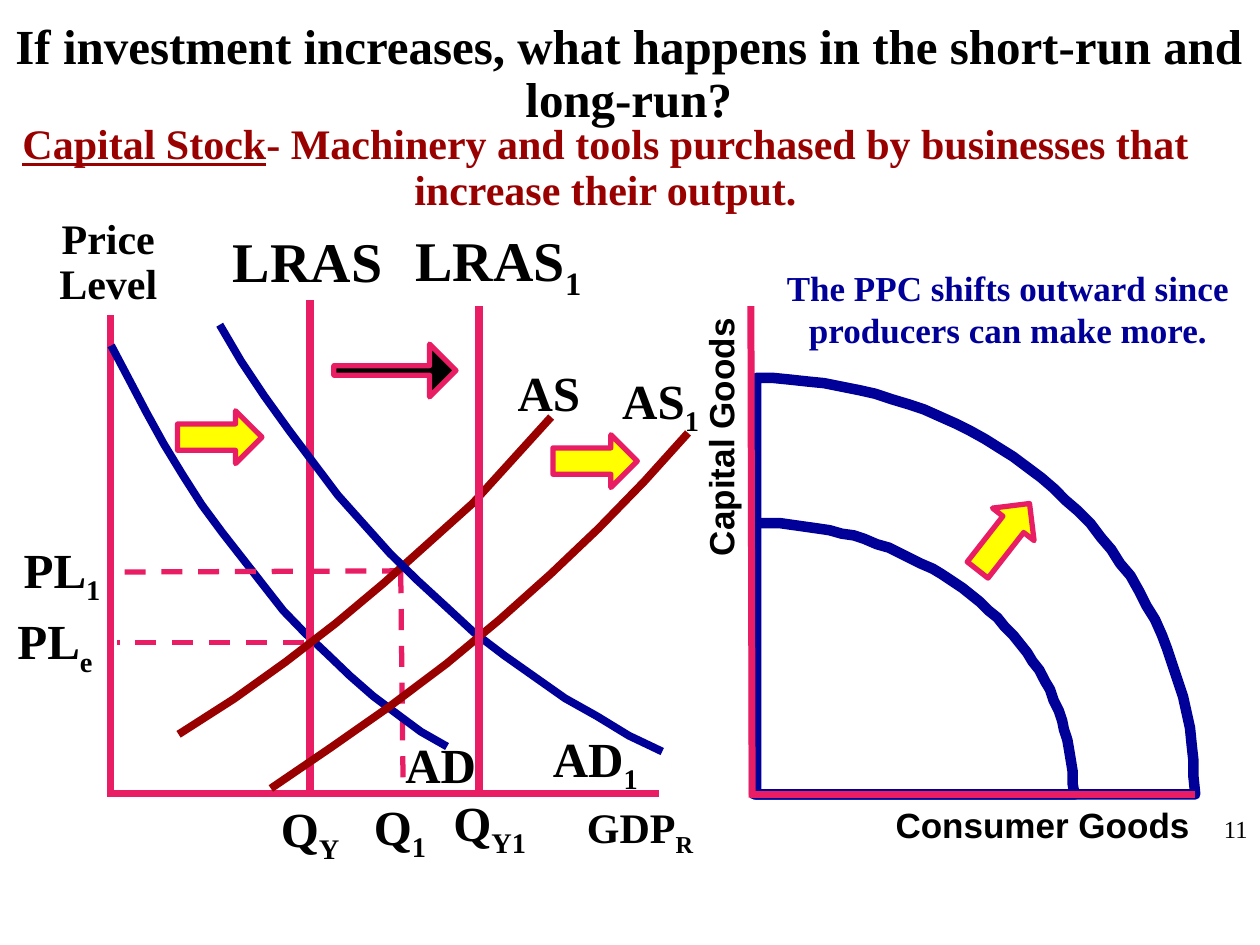
import math
from dataclasses import dataclass

import pptx
import pptx.util
from lxml import etree
from pptx.dml.color import RGBColor
from pptx.enum.dml import MSO_LINE
from pptx.enum.shapes import MSO_CONNECTOR, MSO_SHAPE
from pptx.enum.text import MSO_ANCHOR, MSO_AUTO_SIZE, PP_ALIGN
from pptx.oxml.ns import qn

Pt = pptx.util.Pt


@dataclass(frozen=True)
class Theme:
    serif: str = "Times New Roman"
    sans: str = "Arial"
    black: RGBColor = RGBColor(0x00, 0x00, 0x00)
    pink: RGBColor = RGBColor(0xE9, 0x1D, 0x63)
    blue: RGBColor = RGBColor(0x00, 0x00, 0x99)
    red: RGBColor = RGBColor(0x99, 0x00, 0x00)
    yellow: RGBColor = RGBColor(0xFF, 0xFF, 0x00)
    long_run: int = 32
    heading: int = 28
    definition: int = 24
    note: int = 20
    page: int = 14


THEME = Theme()
DEMAND_BEND = (0.36, 0.67)
SUPPLY_BEND = (0.59, 0.56)


def place(shape, box):
    shape.left, shape.top, shape.width, shape.height = map(Pt, box)


def format_paragraph(paragraph, size, color=THEME.black, name=THEME.serif,
                     align=PP_ALIGN.LEFT, spacing=1.0, bold=True):
    paragraph.alignment = align
    paragraph.line_spacing = spacing
    font = paragraph.font
    font.name, font.size, font.bold = name, Pt(size), bold
    font.color.rgb = color


def add_text(slide, box, lines, size, wrap=True, **style):
    shape = slide.shapes.add_textbox(*map(Pt, box))
    frame = shape.text_frame
    frame.word_wrap = wrap
    for index, line in enumerate(lines):
        paragraph = frame.paragraphs[0] if index == 0 else frame.add_paragraph()
        paragraph.add_run().text = line
        format_paragraph(paragraph, size, **style)
    return shape


def add_label(slide, box, text, size=THEME.heading):
    base, _, subscript = text.partition("_")
    shape = add_text(slide, box, [base], size, wrap=False)
    if subscript:
        run = shape.text_frame.paragraphs[0].add_run()
        run.text = subscript
        run.font._element.set("baseline", "-25000")


def add_line(slide, start, end, width, dashed=False):
    connector = slide.shapes.add_connector(
        MSO_CONNECTOR.STRAIGHT, *map(Pt, start + end))
    connector.line.color.rgb = THEME.pink
    connector.line.width = Pt(width)
    if dashed:
        connector.line.dash_style = MSO_LINE.DASH
    etree.SubElement(connector._element.spPr, qn("a:effectLst"))


def add_outline(slide, points, color, width, close=False):
    builder = slide.shapes.build_freeform(*points[0], scale=Pt(1))
    builder.add_line_segments(points[1:], close=close)
    shape = builder.convert_to_shape()
    shape.shadow.inherit = False
    shape.fill.background()
    shape.line.color.rgb = color
    shape.line.width = Pt(width)
    return shape


def add_curve(slide, box, bend, rising, color, tilt, steps=16):
    left, top, width, height = box
    first, last = (1, 0) if rising else (0, 1)
    points = []
    for step in range(steps + 1):
        t = step / steps
        x = 2 * t * (1 - t) * bend[0] + t * t
        y = (1 - t) ** 2 * first + 2 * t * (1 - t) * bend[1] + t * t * last
        points.append((left + width * x, top + height * y))
    add_outline(slide, points, color, 4.5).rotation = tilt


def add_frontier(slide, left, top, width, height, steps=40):
    angles = [math.pi / 2 * step / steps for step in range(steps + 1)]
    points = [(left + width * math.sin(angle), top + height * (1 - math.cos(angle)))
              for angle in angles]
    add_outline(slide, points + [(left, top + height)], THEME.blue, 6, close=True)


def add_arrow(slide, box, fill=THEME.yellow, shaft=0.5, rotation=0):
    arrow = slide.shapes.add_shape(MSO_SHAPE.RIGHT_ARROW, *map(Pt, box))
    arrow.adjustments[0] = shaft
    arrow.rotation = rotation
    arrow.shadow.inherit = False
    arrow.fill.solid()
    arrow.fill.fore_color.rgb = fill
    arrow.line.color.rgb = THEME.pink
    arrow.line.width = Pt(3)


def add_headings(slide):
    title = slide.shapes.title
    place(title, (-0.7, 0, 720, 85.7))
    frame = title.text_frame
    frame.text = "If investment increases, what happens in the short-run and long-run?"
    frame.auto_size = MSO_AUTO_SIZE.NONE
    frame.vertical_anchor = MSO_ANCHOR.MIDDLE
    format_paragraph(frame.paragraphs[0], THEME.heading,
                     align=PP_ALIGN.CENTER, spacing=0.9)

    definition = add_text(slide, (-13, 67, 718, 77), ["Capital Stock"],
                          THEME.definition, color=THEME.red,
                          align=PP_ALIGN.CENTER, spacing=0.9)
    paragraph = definition.text_frame.paragraphs[0]
    paragraph.runs[0].font.underline = True
    paragraph.add_run().text = ("- Machinery and tools purchased by businesses "
                                "that increase their output.")


def add_market(slide):
    add_line(slide, (229, 327), (230.4, 453.6), 3, dashed=True)
    add_line(slide, (63.4, 180), (63.4, 455.6), 4)
    add_line(slide, (61.9, 453.6), (376.6, 453.6), 4)
    add_curve(slide, (76.3, 188, 166.3, 248.4), DEMAND_BEND, False, THEME.blue, 354)
    add_line(slide, (177.1, 171.4), (177.1, 454.3), 4.5)
    add_line(slide, (173.5, 367.2), (67, 367.2), 3, dashed=True)
    add_line(slide, (230.4, 326.2), (67, 326.9), 3, dashed=True)
    add_curve(slide, (96.5, 246.2, 224.6, 166.3), SUPPLY_BEND, True, THEME.red, 356, 8)
    add_curve(slide, (139, 172.8, 226, 269.3), DEMAND_BEND, False, THEME.blue, 354)
    add_curve(slide, (147.6, 256.3, 252, 185.8), SUPPLY_BEND, True, THEME.red, 356, 8)
    add_line(slide, (273.6, 175), (273.6, 454.3), 4.5)

    add_arrow(slide, (101.5, 234.7, 48.2, 30.2))
    add_arrow(slide, (316, 248.4, 48.2, 30.2))
    add_arrow(slide, (190.8, 196.6, 69.8, 30.2), fill=THEME.black, shaft=0.18)

    for text, left, top, width in [
        ("AD", 224.6, 416.2, 54.7),
        ("AD_1", 308.9, 412.6, 64.8),
        ("AS", 288.7, 203.8, 56.9),
        ("AS_1", 348.5, 208, 60.5),
        ("PL_e", 2.9, 345.6, 58.3),
        ("PL_1", 6.5, 304.6, 59.8),
        ("Q_Y", 153.4, 452.9, 49.7),
        ("Q_1", 206.6, 451.4, 46),
        ("Q_Y1", 252, 449.3, 59.8),
    ]:
        add_label(slide, (left, top, width, 41), text)
    add_label(slide, (126, 126, 100, 45.4), "LRAS", THEME.long_run)
    add_label(slide, (230.4, 125.3, 111.6, 46), "LRAS_1", THEME.long_run)
    add_label(slide, (328.3, 454.3, 76.3, 36), "GDP_R", THEME.definition)
    add_text(slide, (12.2, 121, 99.4, 59.8), ["Price", "Level"],
             THEME.definition, align=PP_ALIGN.CENTER, spacing=0.9)


def add_possibilities(slide):
    add_frontier(slide, 432, 216, 250.6, 237.6)
    add_frontier(slide, 431.3, 298.8, 182.2, 154.8)
    add_line(slide, (429.1, 175), (429.8, 455.8), 4)
    add_line(slide, (429.1, 454.3), (682.6, 454.3), 4)
    add_arrow(slide, (549.4, 291.6, 48.2, 30.2), rotation=308)
    axis_style = dict(name=THEME.sans, align=PP_ALIGN.CENTER)
    vertical = add_text(slide, (333.4, 234, 157, 31.7), ["Capital Goods"],
                        THEME.note, **axis_style)
    vertical.rotation = 270
    add_text(slide, (504, 455.8, 183.6, 31.7), ["Consumer Goods"],
             THEME.note, **axis_style)
    add_text(slide, (432, 149, 288, 55.4),
             ["The PPC shifts outward since producers can make more."],
             THEME.note, color=THEME.blue, align=PP_ALIGN.CENTER)


def main():
    presentation = pptx.Presentation()
    presentation.slide_width, presentation.slide_height = Pt(720), Pt(540)
    slide = presentation.slides.add_slide(presentation.slide_layouts[5])
    add_headings(slide)
    add_market(slide)
    add_possibilities(slide)
    add_text(slide, (570.2, 461.5, 149.8, 36), ["11"], THEME.page,
             align=PP_ALIGN.RIGHT, bold=False)
    presentation.save("out.pptx")


if __name__ == "__main__":
    main()
